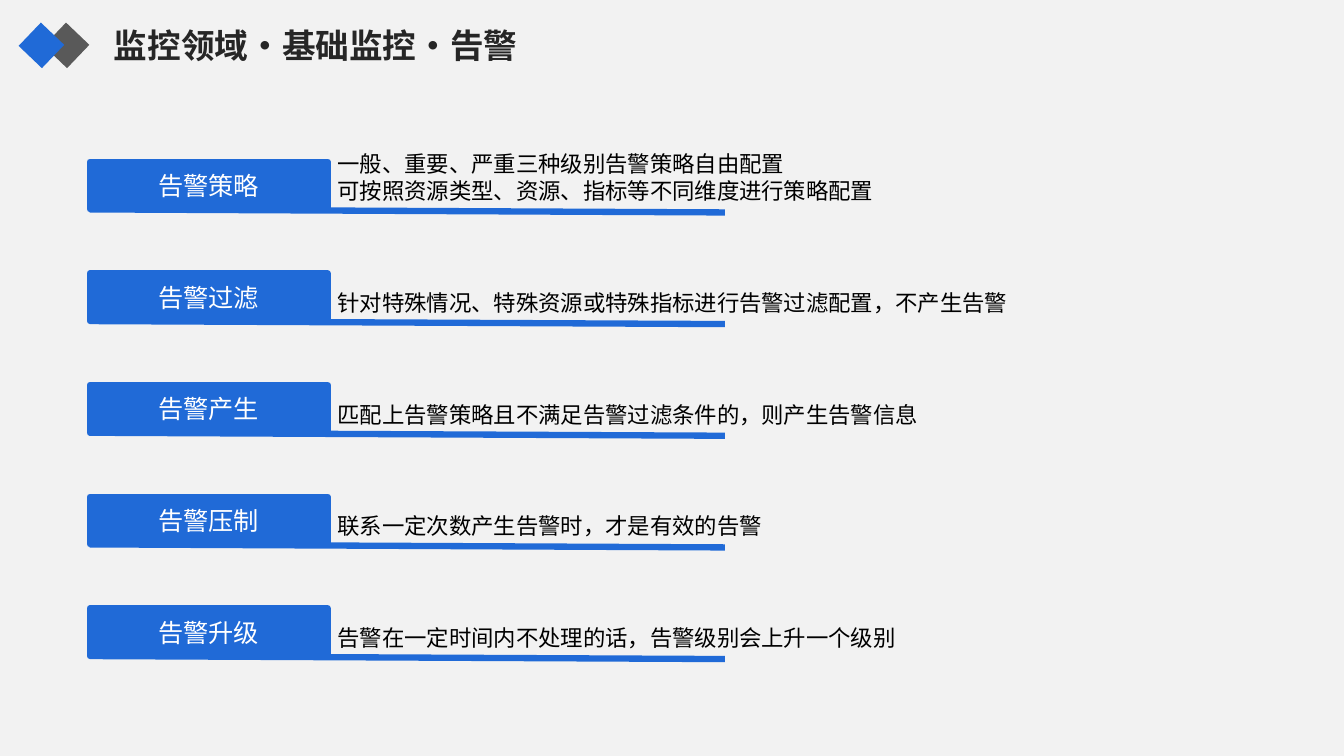
from dataclasses import dataclass

from lxml.etree import SubElement
from pptx import Presentation
from pptx.dml.color import RGBColor
from pptx.enum.shapes import MSO_CONNECTOR as Link, MSO_SHAPE as Kind
from pptx.enum.text import MSO_ANCHOR as Anchor, MSO_AUTO_SIZE as Fit, PP_ALIGN as Align
from pptx.oxml.ns import qn
from pptx.util import Inches, Pt

HUES = {"back": "F2F2F2", "blue": "206AD7", "gray": "595959",
        "title": "262626", "white": "FFFFFF", "black": "000000"}
FONT = "Noto Sans CJK SC"
WIDE, HIGH = Inches(13.33), Inches(7.5)
LEFT, MID, END, EDGE = 6.68, 24.38, 53.94, 89.57
BASE, STEP, DROP = 27.7, 14.77, 0.4
TAG, PAD, LINE = 6.3, 1.33, 3.6


@dataclass
class Rule:
    name: str
    lines: tuple[str, ...]


@dataclass
class Gem:
    left: float
    hue: str


RULES = [
    Rule("告警策略", ("一般、重要、严重三种级别告警策略自由配置",
                  "可按照资源类型、资源、指标等不同维度进行策略配置")),
    Rule("告警过滤", ("针对特殊情况、特殊资源或特殊指标进行告警过滤配置，不产生告警",)),
    Rule("告警产生", ("匹配上告警策略且不满足告警过滤条件的，则产生告警信息",)),
    Rule("告警压制", ("联系一定次数产生告警时，才是有效的告警",)),
    Rule("告警升级", ("告警在一定时间内不处理的话，告警级别会上升一个级别",)),
]
GEMS = [Gem(3.75, "gray"), Gem(1.88, "blue")]


def tint(hue: str) -> RGBColor:
    return RGBColor.from_string(HUES[hue])


def across(share: float) -> int:
    return round(WIDE * share / 100)


def down(share: float) -> int:
    return round(HIGH * share / 100)


def write(frame, lines: tuple[str, ...], size: int, hue: str,
          side=Align.LEFT, anchor=Anchor.MIDDLE, bold: bool = False) -> None:
    frame.word_wrap = True
    frame.auto_size = Fit.NONE
    frame.vertical_anchor = anchor
    for rank, line in enumerate(lines):
        para = frame.add_paragraph() if rank else frame.paragraphs[0]
        para.alignment = side
        run = para.add_run()
        run.text = line
        font = run.font
        font.name, font.size, font.bold = FONT, Pt(size), bold
        font.color.rgb = tint(hue)
        SubElement(run._r.get_or_add_rPr(), qn("a:ea"), typeface=FONT)


def stroke(line) -> None:
    line.color.rgb = tint("blue")
    line.width = Pt(4.5)


def block(shapes, left: int, top: int, width: int, height: int, hue: str):
    box = shapes.add_shape(Kind.RECTANGLE, left, top, width, height)
    box.shadow.inherit = False
    box.fill.solid()
    box.fill.fore_color.rgb = tint(hue)
    box.line.fill.background()
    return box


def draw_gem(shapes, gem: Gem) -> None:
    side = across(2.4)
    block(shapes, across(gem.left), down(3.87), side, side, gem.hue).rotation = 43.7


def draw_rule(shapes, rule: Rule, base: float) -> None:
    bar = shapes.add_connector(Link.STRAIGHT, across(LEFT), down(base),
                               across(END), down(base + DROP))
    stroke(bar.line)
    SubElement(bar._element.spPr, qn("a:effectLst"))

    tag = block(shapes, across(LEFT), down(base - TAG), across(MID - LEFT), down(TAG), "blue")
    stroke(tag.line)
    write(tag.text_frame, (rule.name,), 18, "white", Align.CENTER)

    tall = PAD + LINE * len(rule.lines)
    note = shapes.add_textbox(across(MID), down(base - tall), across(EDGE - MID), down(tall))
    write(note.text_frame, rule.lines, 16, "black")


def main() -> None:
    deck = Presentation()
    deck.slide_width, deck.slide_height = WIDE, HIGH
    slide = deck.slides.add_slide(deck.slide_layouts[5])
    slide.background.fill.solid()
    slide.background.fill.fore_color.rgb = tint("back")

    title = slide.shapes.title
    title.left, title.top = across(7.73), down(2.67)
    title.width, title.height = across(49.2), down(6.67)
    write(title.text_frame, ("监控领域·基础监控·告警",), 24, "title",
          anchor=Anchor.TOP, bold=True)

    mark = slide.shapes.add_group_shape().shapes
    for gem in GEMS:
        draw_gem(mark, gem)
    for row, rule in enumerate(RULES):
        draw_rule(slide.shapes.add_group_shape().shapes, rule, BASE + STEP * row)
    deck.save("out.pptx")


if __name__ == "__main__":
    main()
